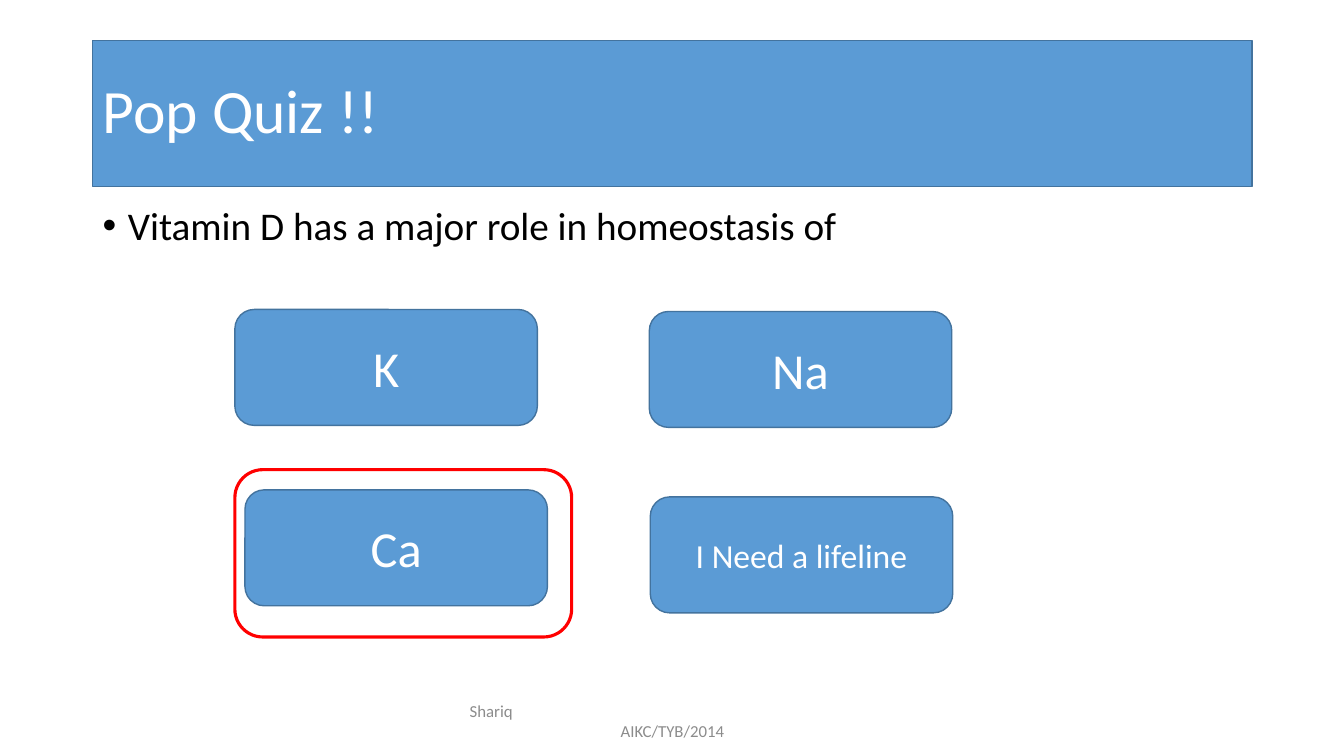
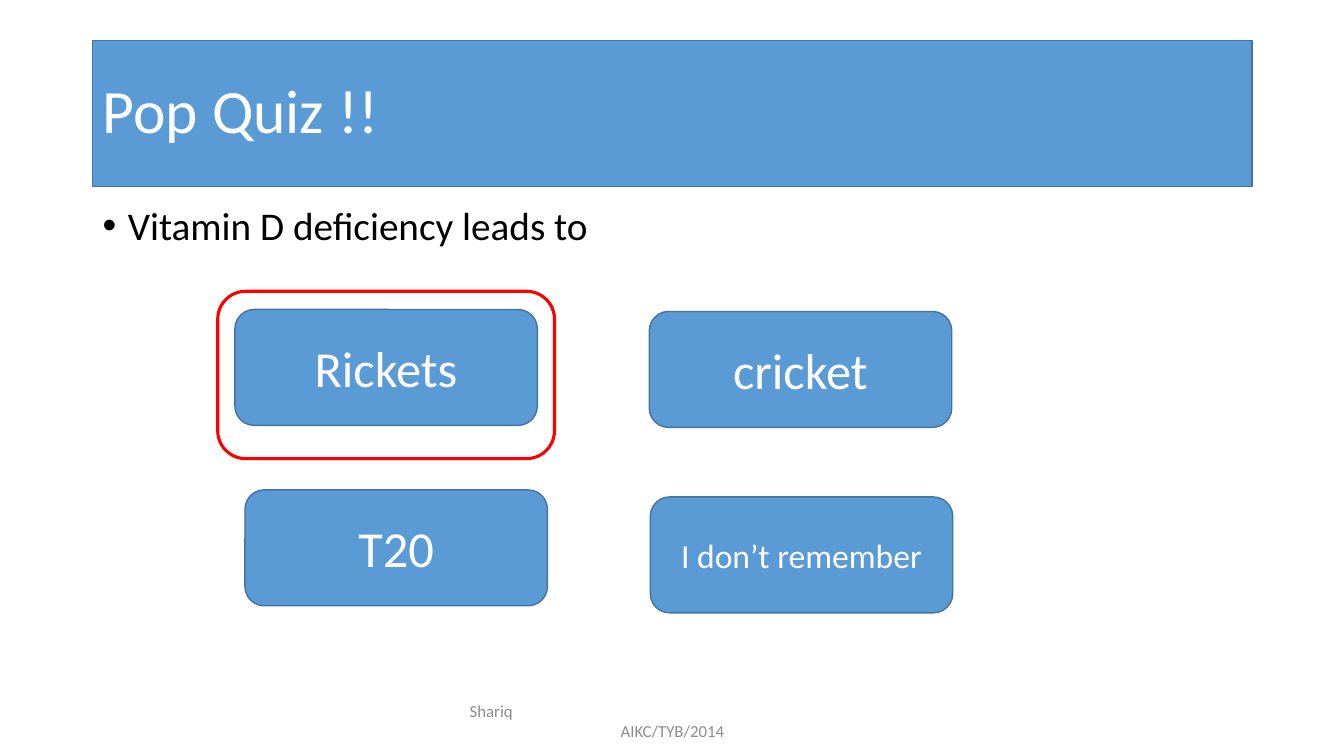
import dataclasses

import lxml.etree
import pptx
import pptx.dml.color
import pptx.enum.shapes
import pptx.enum.text
import pptx.oxml.ns
import pptx.util

PX = 9144  # EMU per px, 100 px to the inch
FONT = "Calibri"
COLORS = {
    "blue": "5B9BD5",
    "edge": "43739E",
    "answer": "FF0000",
    "white": "FFFFFF",
    "black": "000000",
    "footer": "8C8C8C",
}
SHAPES = pptx.enum.shapes.MSO_SHAPE
ALIGN = pptx.enum.text.PP_ALIGN
ANCHOR = pptx.enum.text.MSO_ANCHOR


@dataclasses.dataclass(frozen=True)
class Box:
    x: int
    y: int
    w: int
    h: int

    def emu(self) -> list[int]:
        return [v * PX for v in (self.x, self.y, self.w, self.h)]


@dataclasses.dataclass(frozen=True)
class Quiz:
    question: str
    options: tuple[str, str, str, str]
    ring: Box


TITLE = Box(92, 40, 1150, 145)
QUESTION = Box(92, 200, 1150, 79)
FOOTER = Box(442, 695, 450, 40)

# Option places and text sizes: top left, top right, bottom left, bottom right
OPTION_W, OPTION_H = 300, 115
OPTION_SLOTS = ((233, 307, 36), (644, 309, 36), (243, 486, 36), (645, 493, 24))

QUIZZES = (
    Quiz("Vitamin D has a major role in homeostasis of",
         ("K", "Na", "Ca", "I Need a lifeline"), Box(233, 466, 334, 166)),
    Quiz("Vitamin D deficiency leads to",
         ("Rickets", "cricket", "T20", "I don’t remember"), Box(216, 289, 334, 166)),
)


def rgb(name: str) -> pptx.dml.color.RGBColor:
    return pptx.dml.color.RGBColor.from_string(COLORS[name])


def set_text(s, text: str, size: int, color: str, align=ALIGN.LEFT, anchor=ANCHOR.MIDDLE):
    """Fill a shape with text in one style and return its paragraphs."""
    tf = s.text_frame
    tf.word_wrap = True
    tf.vertical_anchor = anchor
    tf.text = text
    for p in tf.paragraphs:
        p.alignment = align
        for r in p.runs:
            r.font.name = FONT
            r.font.size = pptx.util.Pt(size)
            r.font.color.rgb = rgb(color)
    return tf.paragraphs


def add_panel(slide, kind, box: Box, fill: str | None, line: str, width: float):
    s = slide.shapes.add_shape(kind, *box.emu())
    s.shadow.inherit = False
    if fill:
        s.fill.solid()
        s.fill.fore_color.rgb = rgb(fill)
    else:
        s.fill.background()
    s.line.color.rgb = rgb(line)
    s.line.width = pptx.util.Pt(width)
    return s


def add_bullet(p, indent: int) -> None:
    pPr = p._p.get_or_add_pPr()
    pPr.set("marL", str(indent * PX))
    pPr.set("indent", str(-indent * PX))
    for tag, key, value in (("a:buFont", "typeface", "Arial"), ("a:buChar", "char", "•")):
        lxml.etree.SubElement(pPr, pptx.oxml.ns.qn(tag)).set(key, value)


def add_frame(slide) -> None:
    """Title band and footer, the same on every slide."""
    band = add_panel(slide, SHAPES.RECTANGLE, TITLE, "blue", "edge", 1)
    set_text(band, "Pop Quiz !!", 44, "white")[0].line_spacing = 0.9

    s = slide.shapes.add_textbox(*FOOTER.emu())
    author, course = set_text(s, "Shariq\nAIKC/TYB/2014", 12, "footer")
    author._p.get_or_add_pPr().set("marL", str(14 * PX))
    course.alignment = ALIGN.CENTER


def add_question(slide, text: str) -> None:
    s = slide.shapes.add_textbox(*QUESTION.emu())
    p = set_text(s, text, 28, "black", anchor=ANCHOR.TOP)[0]
    p.line_spacing = 0.9
    p.space_before = pptx.util.Pt(10)
    add_bullet(p, 25)


def add_quiz(prs, quiz: Quiz) -> None:
    slide = prs.slides.add_slide(prs.slide_layouts[6])
    add_frame(slide)
    add_question(slide, quiz.question)
    for text, (x, y, size) in zip(quiz.options, OPTION_SLOTS):
        s = add_panel(slide, SHAPES.ROUNDED_RECTANGLE, Box(x, y, OPTION_W, OPTION_H),
                      "blue", "edge", 1)
        set_text(s, text, size, "white", ALIGN.CENTER)
    # Ring around the right answer
    add_panel(slide, SHAPES.ROUNDED_RECTANGLE, quiz.ring, None, "answer", 2.25)


def main() -> None:
    prs = pptx.Presentation()
    prs.slide_width, prs.slide_height = 1333 * PX, 750 * PX
    for quiz in QUIZZES:
        add_quiz(prs, quiz)
    prs.save("out.pptx")


if __name__ == "__main__":
    main()
